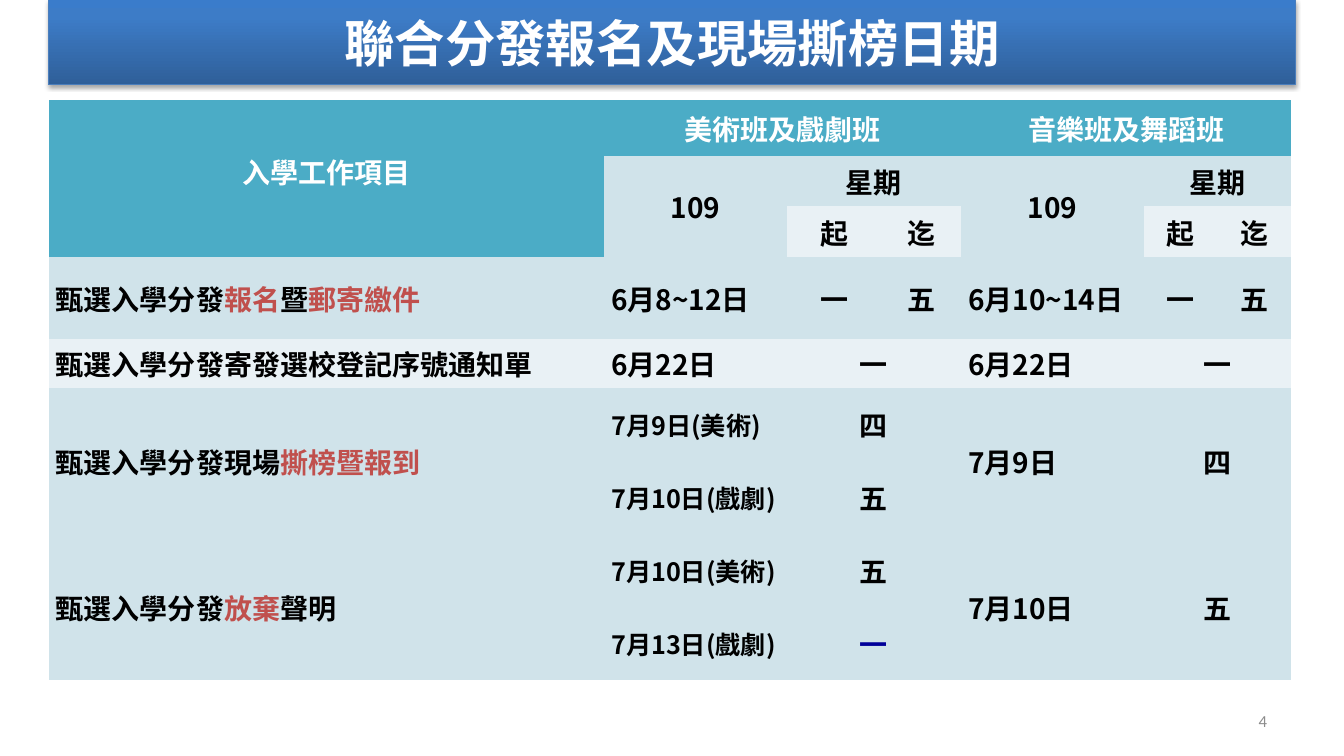
from pptx import Presentation
from pptx.dml.color import RGBColor
from pptx.enum.shapes import MSO_SHAPE
from pptx.enum.text import MSO_ANCHOR, PP_ALIGN
from pptx.oxml import parse_xml
from pptx.oxml.ns import nsdecls, qn
from pptx.util import Pt

TITLE = "聯合分發報名及現場撕榜日期"
PAGE = "4"
# (row, column, rows spanned, columns spanned, text); *…* marks red words
CELLS = [
    (0, 0, 3, 1, "入學工作項目"),
    (0, 1, 1, 3, "美術班及戲劇班"),
    (0, 4, 1, 3, "音樂班及舞蹈班"),
    (1, 1, 2, 1, "109"), (1, 2, 1, 2, "星期"),
    (1, 4, 2, 1, "109"), (1, 5, 1, 2, "星期"),
    (2, 2, 1, 1, "起"), (2, 3, 1, 1, "迄"),
    (2, 5, 1, 1, "起"), (2, 6, 1, 1, "迄"),
    (3, 0, 1, 1, "甄選入學分發*報名*暨*郵寄繳件*"),
    (3, 1, 1, 1, "6月8~12日"), (3, 2, 1, 1, "一"), (3, 3, 1, 1, "五"),
    (3, 4, 1, 1, "6月10~14日"), (3, 5, 1, 1, "一"), (3, 6, 1, 1, "五"),
    (4, 0, 1, 1, "甄選入學分發寄發選校登記序號通知單"),
    (4, 1, 1, 1, "6月22日"), (4, 2, 1, 2, "一"),
    (4, 4, 1, 1, "6月22日"), (4, 5, 1, 2, "一"),
    (5, 0, 2, 1, "甄選入學分發現場*撕榜暨報到*"),
    (5, 1, 1, 1, "7月9日(美術)"), (5, 2, 1, 2, "四"),
    (5, 4, 2, 1, "7月9日"), (5, 5, 2, 2, "四"),
    (6, 1, 1, 1, "7月10日(戲劇)"), (6, 2, 1, 2, "五"),
    (7, 0, 2, 1, "甄選入學分發*放棄*聲明"),
    (7, 1, 1, 1, "7月10日(美術)"), (7, 2, 1, 2, "五"),
    (7, 4, 2, 1, "7月10日"), (7, 5, 2, 2, "五"),
    (8, 1, 1, 1, "7月13日(戲劇)"), (8, 2, 1, 2, "一"),
]
COL_WIDTHS = [396.7, 130.4, 67.7, 56.9, 130.4, 52.8, 52.8]
ROW_HEIGHTS = [39.6, 31, 31, 33.1, 35.3, 28.8, 36, 20.2, 20.2]
HEADER_ROWS = 3
LIGHT_ROWS = (2, 4)
DATE_COLS = (1, 4)
NAVY_CELL = (8, 2)

CJK, LATIN = "Noto Sans CJK SC", "Calibri"
WHITE = RGBColor(0xFF, 0xFF, 0xFF)
BLACK = RGBColor(0, 0, 0)
RED = RGBColor(0xC0, 0x50, 0x4D)
NAVY = RGBColor(0, 0, 0x99)
GRAY = RGBColor(0x8C, 0x8C, 0x8C)
TEAL = RGBColor(0x4B, 0xAC, 0xC6)
BAND = RGBColor(0xD0, 0xE3, 0xEA)
LIGHT = RGBColor(0xE9, 0xF1, 0xF5)
EDGE = RGBColor(0x4B, 0x7E, 0xBC)
GRADIENT = [(0, "2F5F99"), (80, "3D7CC7"), (100, "3A7CCB")]
NO_STYLE = "{2D5ABB26-0587-4C30-8999-92F81FD0307C}"


def style(r, size, color, font=CJK, bold=True):
    r.font.size, r.font.bold, r.font.name = Pt(size), bold, font
    r.font.color.rgb = color
    ea = r._r.get_or_add_rPr().makeelement(qn("a:ea"), {"typeface": font})
    r.font._element.find(qn("a:latin")).addnext(ea)


def add_title(s):
    sp = s.shapes.add_shape(MSO_SHAPE.RECTANGLE, Pt(34.6), Pt(0), Pt(890.6), Pt(60.5))
    sp.line.color.rgb, sp.line.width = EDGE, Pt(0.75)
    sp.shadow.inherit = False
    props = sp._element.spPr
    stops = "".join(f'<a:gs pos="{pos * 1000}"><a:srgbClr val="{c}"/></a:gs>'
                    for pos, c in GRADIENT)
    props.find(qn("a:prstGeom")).addnext(parse_xml(
        f'<a:gradFill {nsdecls("a")}><a:gsLst>{stops}</a:gsLst>'
        '<a:lin ang="16200000" scaled="0"/></a:gradFill>'))
    props.find(qn("a:effectLst")).append(parse_xml(
        f'<a:outerShdw {nsdecls("a")} blurRad="{Pt(3.1)}" dist="{Pt(1.8)}" dir="5400000" '
        'rotWithShape="0"><a:srgbClr val="000000"><a:alpha val="35000"/></a:srgbClr>'
        '</a:outerShdw>'))
    tf = sp.text_frame
    tf.text, tf.vertical_anchor = TITLE, MSO_ANCHOR.MIDDLE
    p = tf.paragraphs[0]
    p.alignment, p.space_before, p.space_after = PP_ALIGN.CENTER, Pt(6), Pt(6)
    style(p.runs[0], 36, WHITE)


def fill_color(row, col):
    if row == 0 or (row < HEADER_ROWS and col == 0):
        return TEAL
    return LIGHT if row in LIGHT_ROWS else BAND


def write_cell(cell, row, col, text):
    header = row < HEADER_ROWS
    cell.vertical_anchor = MSO_ANCHOR.MIDDLE
    if not header:
        cell.margin_left = cell.margin_right = Pt(5)
        cell.margin_top = cell.margin_bottom = Pt(0)
    p = cell.text_frame.paragraphs[0]
    centred = header or col not in (0, *DATE_COLS)
    p.alignment = PP_ALIGN.CENTER if centred else PP_ALIGN.LEFT
    if (row, col) == (0, 0):
        p.line_spacing = Pt(18)
    base = WHITE if row == 0 else NAVY if (row, col) == NAVY_CELL else BLACK
    size = 18 if row >= 5 and col == 1 else 20
    for i, part in enumerate(text.split("*")):
        if part:
            r = p.add_run()
            r.text = part
            style(r, size, RED if i % 2 else base)


def add_schedule(s):
    frame = s.shapes.add_table(len(ROW_HEIGHTS), len(COL_WIDTHS), Pt(34.9), Pt(71.6),
                               Pt(sum(COL_WIDTHS)), Pt(sum(ROW_HEIGHTS)))
    table = frame.table
    table._tbl.tblPr.find(qn("a:tableStyleId")).text = NO_STYLE
    for column, width in zip(table.columns, COL_WIDTHS):
        column.width = Pt(width)
    for i, (row, height) in enumerate(zip(table.rows, ROW_HEIGHTS)):
        row.height = Pt(height)
        for j, cell in enumerate(row.cells):
            cell.fill.solid()
            cell.fill.fore_color.rgb = fill_color(i, j)
    for row, col, down, across, text in CELLS:
        cell = table.cell(row, col)
        if down * across > 1:
            cell.merge(table.cell(row + down - 1, col + across - 1))
        write_cell(cell, row, col, text)


def add_page_number(s):
    tf = s.shapes.add_textbox(Pt(688.3), Pt(500.4), Pt(223.9), Pt(28.8)).text_frame
    tf.word_wrap, tf.vertical_anchor = True, MSO_ANCHOR.MIDDLE
    tf.text = PAGE
    p = tf.paragraphs[0]
    p.alignment = PP_ALIGN.RIGHT
    style(p.runs[0], 12, GRAY, LATIN, False)


def main():
    prs = Presentation()
    prs.slide_width, prs.slide_height = Pt(960), Pt(540)
    s = prs.slides.add_slide(prs.slide_layouts[6])
    add_schedule(s)
    add_title(s)
    add_page_number(s)
    prs.save("out.pptx")


if __name__ == "__main__":
    main()
